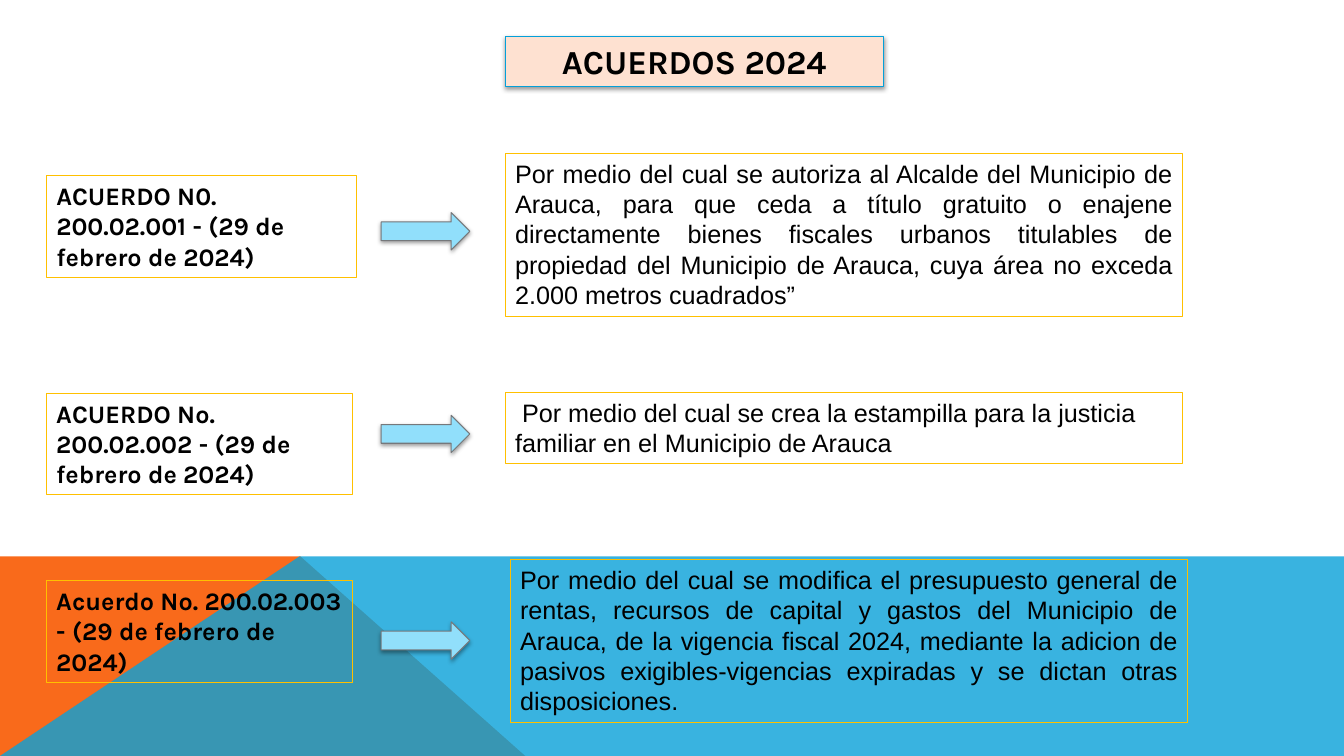
from dataclasses import dataclass

from lxml import etree
from pptx import Presentation
from pptx.dml.color import RGBColor
from pptx.enum.shapes import MSO_SHAPE
from pptx.enum.text import MSO_ANCHOR, MSO_AUTO_SIZE, PP_ALIGN
from pptx.oxml.ns import qn
from pptx.util import Inches, Pt

RIGHT_ARROW = MSO_SHAPE.RIGHT_ARROW
TOP = MSO_ANCHOR.TOP
NO_FIT = MSO_AUTO_SIZE.NONE
LEFT, CENTER, JUSTIFY = PP_ALIGN.LEFT, PP_ALIGN.CENTER, PP_ALIGN.JUSTIFY

BLACK = RGBColor(0x00, 0x00, 0x00)
ORANGE = RGBColor(0xF9, 0x6A, 0x1B)
BLUE = RGBColor(0x08, 0xA1, 0xD9)
PEACH = RGBColor(0xFE, 0xE1, 0xD1)
TITLE_BORDER = RGBColor(0x03, 0xA0, 0xD9)
GOLD = RGBColor(0xFF, 0xC0, 0x00)
SKY = RGBColor(0x91, 0xDF, 0xFB)
GRAY = RGBColor(0x76, 0x78, 0x7B)

HEADING_FONT, BODY_FONT = "Karla", "Arial"
SLIDE_WIDTH, SLIDE_HEIGHT, BAND_TOP = 13.33, 7.5, 5.52
NAME_LEFT, NAME_HEIGHT = 0.46, 1.01
ARROW_LEFT, ARROW_WIDTH, ARROW_HEIGHT = 3.78, 0.88, 0.37
SUMMARY_WIDTH = 6.72


@dataclass(frozen=True)
class Agreement:
    name: str
    name_top: float
    name_width: float
    arrow_top: float
    summary: str
    summary_left: float
    summary_top: float
    summary_height: float
    alignment: PP_ALIGN


AGREEMENTS = [
    Agreement(
        "ACUERDO N0. 200.02.001 - (29 de febrero de 2024)", 1.74, 3.08, 2.11,
        "Por medio del cual se autoriza al Alcalde del Municipio de Arauca, "
        "para que ceda a título gratuito o enajene directamente bienes fiscales "
        "urbanos titulables de propiedad del Municipio de Arauca, cuya área no "
        "exceda 2.000 metros cuadrados”",
        5.01, 1.52, 1.62, JUSTIFY),
    Agreement(
        "ACUERDO No. 200.02.002 - (29 de febrero de 2024)", 3.9, 3.04, 4.12,
        " Por medio del cual se crea la estampilla para la justicia familiar "
        "en el Municipio de Arauca",
        5.01, 3.89, 0.71, LEFT),
    Agreement(
        "Acuerdo No. 200.02.003 - (29 de febrero de 2024)", 5.76, 3.04, 6.17,
        "Por medio del cual se modifica el presupuesto general de rentas, "
        "recursos de capital y gastos del Municipio de Arauca, de la vigencia "
        "fiscal 2024, mediante la adicion de pasivos exigibles-vigencias "
        "expiradas y se dictan otras disposiciones.",
        5.06, 5.55, 1.62, JUSTIFY),
]


def add_band(page, corners: list[tuple[float, float]], color: RGBColor):
    points = [(Inches(x), Inches(y)) for x, y in corners]
    builder = page.shapes.build_freeform(*points[0], scale=1.0)
    builder.add_line_segments(points[1:], close=True)
    band = builder.convert_to_shape()
    band.shadow.inherit = False
    band.fill.solid()
    band.fill.fore_color.rgb = color
    band.line.fill.background()
    return band


def set_opacity(shape, percent: int) -> None:
    color = shape.fill._xPr.find(qn("a:solidFill"))[0]
    etree.SubElement(color, qn("a:alpha"), val=str(percent * 1000))


def outline(shape, color: RGBColor) -> None:
    shape.line.color.rgb = color
    shape.line.width = Pt(0.75)


def add_shadow(shape) -> None:
    shape.shadow.inherit = False
    effects = shape._element.spPr.find(qn("a:effectLst"))
    shadow = etree.SubElement(
        effects, qn("a:outerShdw"), blurRad=str(Pt(3.1)), dist=str(Pt(1.6)),
        dir=str(90 * 60000), rotWithShape="0")
    color = etree.SubElement(shadow, qn("a:srgbClr"), val=str(BLACK))
    etree.SubElement(color, qn("a:alpha"), val="38000")


def write(box, text: str, font: str, size: int, bold: bool, alignment: PP_ALIGN) -> None:
    frame = box.text_frame
    frame.text = text
    frame.word_wrap = True
    frame.auto_size = NO_FIT
    frame.vertical_anchor = TOP
    para = frame.paragraphs[0]
    para.alignment = alignment
    for span in para.runs:
        span.font.name = font
        span.font.size = Pt(size)
        span.font.bold = bold
        span.font.color.rgb = BLACK


def add_title(page, text: str) -> None:
    title = page.shapes.title
    title.left, title.top = Inches(5.01), Inches(0.36)
    title.width, title.height = Inches(3.75), Inches(0.5)
    title.fill.solid()
    title.fill.fore_color.rgb = PEACH
    outline(title, TITLE_BORDER)
    add_shadow(title)
    write(title, text, HEADING_FONT, 24, True, CENTER)


def add_framed_text(page, left: float, top: float, width: float, height: float,
                    text: str, font: str, bold: bool, alignment: PP_ALIGN) -> None:
    box = page.shapes.add_textbox(Inches(left), Inches(top), Inches(width), Inches(height))
    outline(box, GOLD)
    write(box, text, font, 18, bold, alignment)


def add_arrow(page, top: float) -> None:
    arrow = page.shapes.add_shape(
        RIGHT_ARROW, Inches(ARROW_LEFT), Inches(top), Inches(ARROW_WIDTH), Inches(ARROW_HEIGHT))
    arrow.fill.solid()
    arrow.fill.fore_color.rgb = SKY
    outline(arrow, GRAY)
    add_shadow(arrow)


def add_agreement(page, item: Agreement) -> None:
    add_framed_text(page, NAME_LEFT, item.name_top, item.name_width, NAME_HEIGHT,
                    item.name, HEADING_FONT, True, LEFT)
    add_arrow(page, item.arrow_top)
    add_framed_text(page, item.summary_left, item.summary_top, SUMMARY_WIDTH,
                    item.summary_height, item.summary, BODY_FONT, False, item.alignment)


def main() -> None:
    deck = Presentation()
    deck.slide_width, deck.slide_height = Inches(SLIDE_WIDTH), Inches(SLIDE_HEIGHT)
    page = deck.slides.add_slide(deck.slide_layouts.get_by_name("Title Only"))
    add_band(page, [(0, SLIDE_HEIGHT), (0, BAND_TOP), (2.98, BAND_TOP),
                    (5.21, SLIDE_HEIGHT)], ORANGE)
    blue_band = add_band(page, [(0, SLIDE_HEIGHT), (2.97, BAND_TOP), (SLIDE_WIDTH, BAND_TOP),
                                (SLIDE_WIDTH, SLIDE_HEIGHT)], BLUE)
    set_opacity(blue_band, 80)
    add_title(page, "ACUERDOS 2024")
    for item in AGREEMENTS:
        add_agreement(page, item)
    deck.save("out.pptx")


if __name__ == "__main__":
    main()
